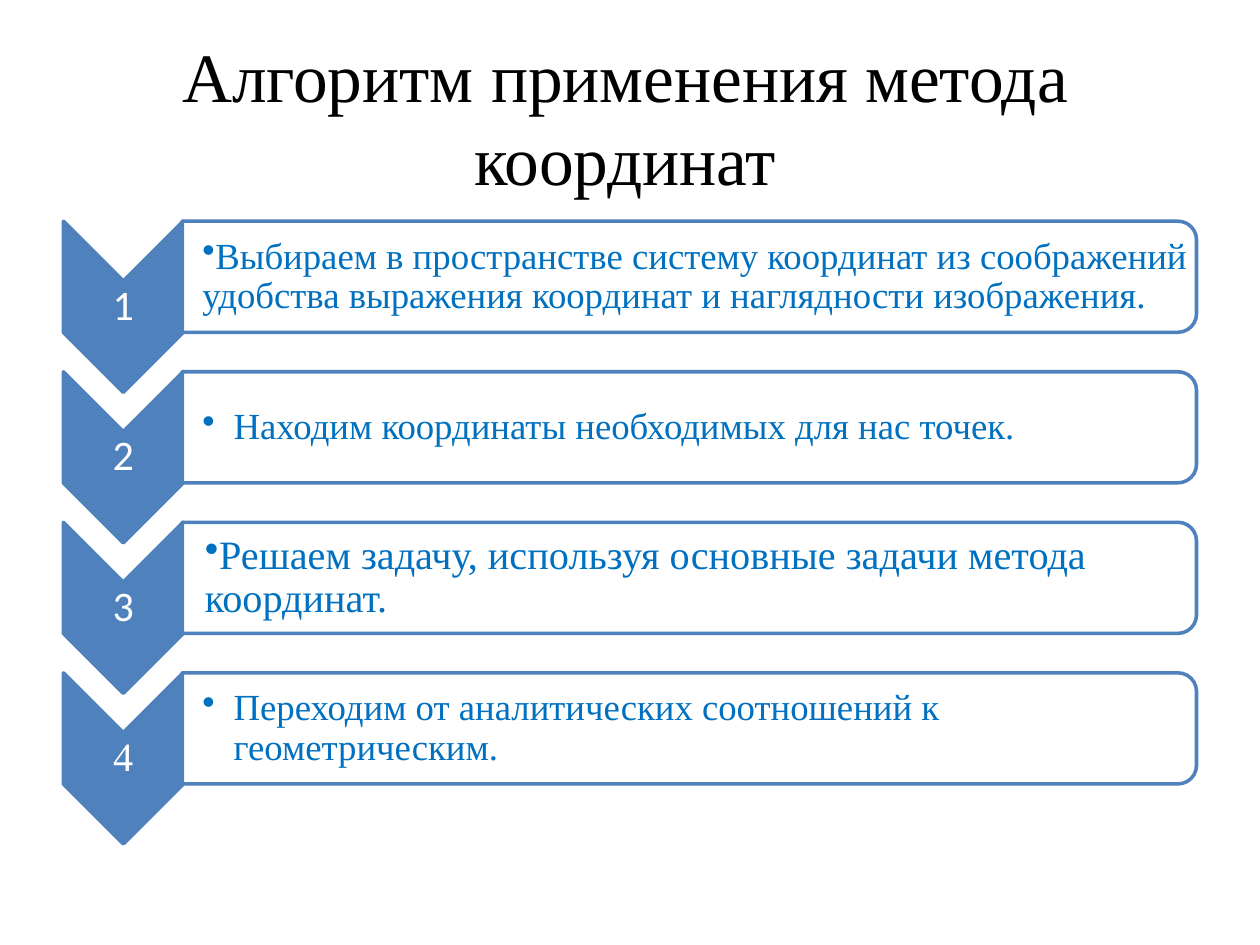
"""Build a slide listing the four steps of the coordinate method."""
from dataclasses import dataclass

from lxml import etree
from pptx import Presentation
from pptx.dml.color import RGBColor
from pptx.enum.shapes import MSO_SHAPE
from pptx.enum.text import MSO_ANCHOR, PP_ALIGN
from pptx.oxml.ns import qn
from pptx.util import Cm, Pt

CHEVRON = MSO_SHAPE.CHEVRON
BAR = MSO_SHAPE.ROUND_2_SAME_RECTANGLE
MIDDLE = MSO_ANCHOR.MIDDLE
CENTER = PP_ALIGN.CENTER
LEFT = PP_ALIGN.LEFT


@dataclass(frozen=True)
class Theme:
    accent: RGBColor = RGBColor(0x4F, 0x81, 0xBD)
    text: RGBColor = RGBColor(0x00, 0x70, 0xC0)
    black: RGBColor = RGBColor(0, 0, 0)
    white: RGBColor = RGBColor(255, 255, 255)
    serif: str = "Times New Roman"
    sans: str = "Calibri"
    title: float = 39.6
    number: float = 24
    body: float = 21
    large: float = 23
    line: float = 2


THEME = Theme()
FIRST_TOP = 4.46
STEP = 3.035
HANGING = 0.63
STEPS = [
    ("1", THEME.sans, THEME.number, THEME.body, 0, 0.4,
     "Выбираем в пространстве систему координат из соображений удобства "
     "выражения координат и наглядности изображения."),
    ("2", THEME.sans, THEME.number, THEME.body, HANGING, 0.4,
     "Находим координаты необходимых для нас точек."),
    ("3", THEME.sans, THEME.number, THEME.large, 0, 0.45,
     "Решаем задачу, используя основные задачи метода координат."),
    ("4", THEME.serif, THEME.large, THEME.body, HANGING, 0.4,
     "Переходим от аналитических соотношений к геометрическим."),
]


def add_turned_shape(slide, kind, left, top, width, height, fill):
    """Add a shape turned by 90 degrees that fills the given visible box."""
    shift = (width - height) / 2
    sp = slide.shapes.add_shape(kind, Cm(left + shift), Cm(top - shift),
                                Cm(height), Cm(width))
    sp.rotation = 90
    sp.shadow.inherit = False
    sp.fill.solid()
    sp.fill.fore_color.rgb = fill
    sp.line.color.rgb = THEME.accent
    sp.line.width = Pt(THEME.line)
    return sp


def set_opacity(sp, percent):
    """Make the solid fill of a shape partly transparent."""
    color = sp.fill._xPr.find(qn("a:solidFill"))[0]
    etree.SubElement(color, qn("a:alpha"), val=str(percent * 1000))


def add_text(slide, box, text, font, size, color, align=CENTER,
             spacing=0.9, insets=(0.05, 0.05, 0.05, 0.05)):
    """Add a wrapped, vertically centred text box and return its paragraph."""
    tf = slide.shapes.add_textbox(*map(Cm, box)).text_frame
    tf.word_wrap = True
    tf.vertical_anchor = MIDDLE
    (tf.margin_left, tf.margin_top,
     tf.margin_right, tf.margin_bottom) = map(Cm, insets)
    tf.text = text
    p = tf.paragraphs[0]
    p.alignment = align
    p.line_spacing = spacing
    r = p.runs[0]
    r.font.name = font
    r.font.size = Pt(size)
    r.font.color.rgb = color
    return p


def add_bullet(p, indent):
    """Give a paragraph a round bullet with a hanging indent."""
    pPr = p._p.get_or_add_pPr()
    pPr.set("marL", str(Cm(indent)))
    pPr.set("indent", str(-Cm(indent)))
    etree.SubElement(pPr, qn("a:buChar"), char="•")


def add_step(slide, top, number, font, number_size, size, indent, inset, text):
    """Add one numbered chevron with its description bar."""
    add_turned_shape(slide, CHEVRON, 1.28, top, 2.41, 3.45, THEME.accent)
    add_text(slide, (1.28, top + 1.2, 2.41, 1.04), number, font,
             number_size, THEME.white)
    bar = add_turned_shape(slide, BAR, 3.67, top, 20.45, 2.24, THEME.white)
    set_opacity(bar, 90)
    p = add_text(slide, (3.68, top + 0.11, 20.35, 2.03), text, THEME.serif,
                 size, THEME.text, LEFT, insets=(inset, 0.03, 0.03, 0.03))
    add_bullet(p, indent)


def main():
    """Build and save the slide."""
    prs = Presentation()
    prs.slide_width, prs.slide_height = Cm(25.4), Cm(19.05)
    slide = prs.slides.add_slide(prs.slide_layouts[6])
    add_text(slide, (0.3, 0.76, 24.61, 3.18),
             "Алгоритм применения метода координат", THEME.serif,
             THEME.title, THEME.black, spacing=1.0,
             insets=(0.25, 0.13, 0.25, 0.13))
    for i, step in enumerate(STEPS):
        add_step(slide, FIRST_TOP + i * STEP, *step)
    prs.save("out.pptx")


if __name__ == "__main__":
    main()
